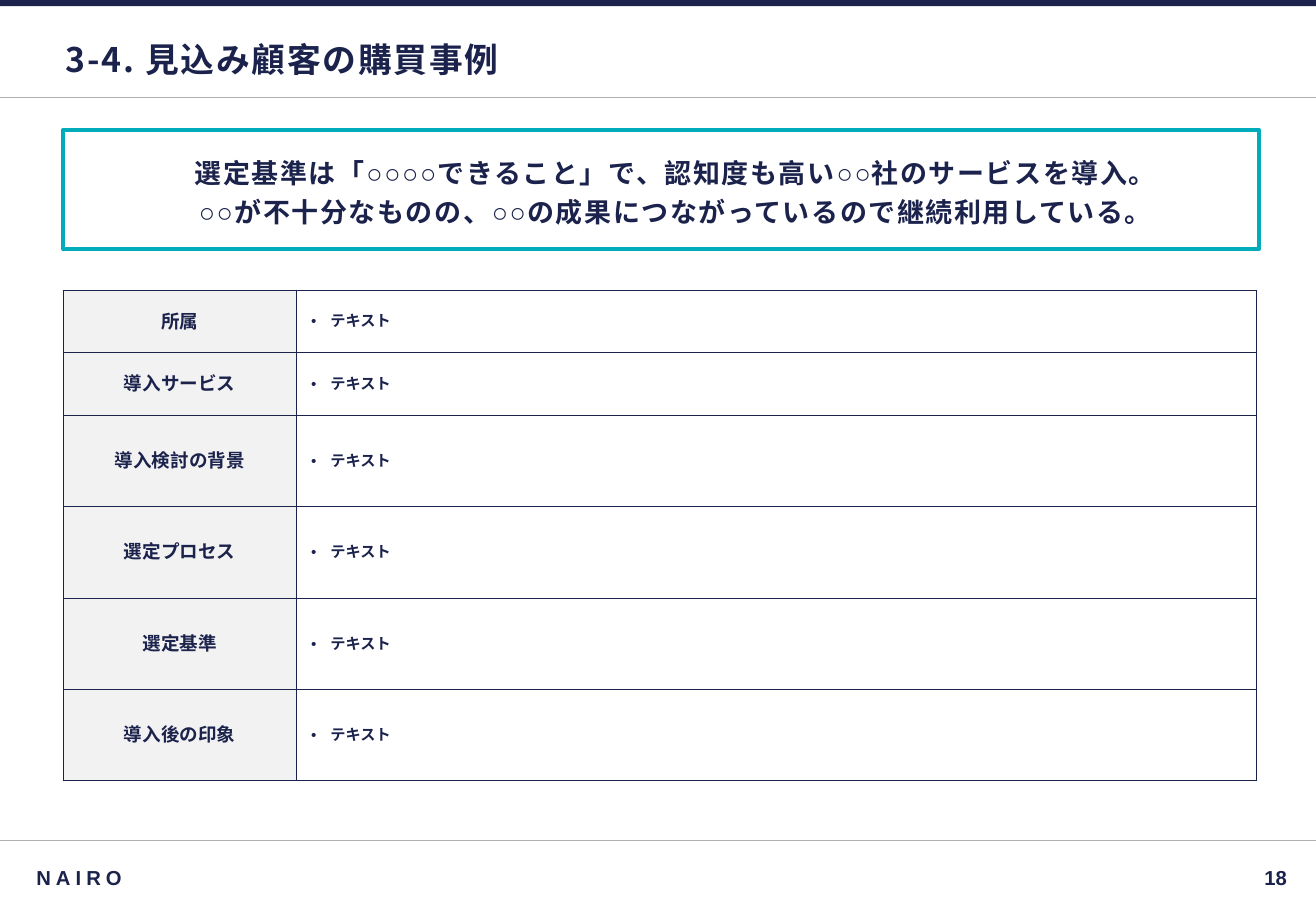
from lxml import etree
from pptx import Presentation
from pptx import util as u
from pptx.dml.color import RGBColor
from pptx.enum import shapes, text
from pptx.oxml.ns import qn

LEFT, CENTER, RIGHT = text.PP_ALIGN.LEFT, text.PP_ALIGN.CENTER, text.PP_ALIGN.RIGHT


def color(value):
    return RGBColor.from_string(value)


class CaseSlide:
    """Style and drawing methods for one slide; lengths are percentages of its size."""

    NAVY, TEAL, RULE, LABEL, WHITE = "1B224C", "00ACBA", "AFAFAF", "F2F2F2", "FFFFFF"
    BODY, HEADING = "Arial", "Noto Sans CJK JP"

    def __init__(self, deck):
        self.deck = deck
        self.page = deck.slides.add_slide(deck.slide_layouts[6])

    def x(self, share):
        return round(self.deck.slide_width * share / 100)

    def y(self, share):
        return round(self.deck.slide_height * share / 100)

    def area(self, left, top, width, height):
        return self.x(left), self.y(top), self.x(width), self.y(height)

    def rule(self, top):
        line = self.page.shapes.add_connector(
            shapes.MSO_CONNECTOR.STRAIGHT, 0, self.y(top), self.x(100), self.y(top))
        line.line.color.rgb = color(self.RULE)
        line.line.width = u.Pt(0.75)
        etree.SubElement(line._element.spPr, qn("a:effectLst"))

    def rectangle(self, place, fill=None, border=None):
        box = self.page.shapes.add_shape(shapes.MSO_SHAPE.RECTANGLE, *self.area(*place))
        box.shadow.inherit = False
        if fill:
            box.fill.solid()
            box.fill.fore_color.rgb = color(fill)
        else:
            box.fill.background()
        if border:
            box.line.color.rgb = color(border)
            box.line.width = u.Pt(2.5)
        else:
            box.line.fill.background()
        return box

    def add_span(self, para, words, size, align=LEFT, font=BODY, spacing=0):
        para.alignment = align
        span = para.add_run()
        span.text = words
        span.font.size = u.Pt(size)
        span.font.bold = True
        span.font.name = font
        span.font.color.rgb = color(self.NAVY)
        props = span._r.get_or_add_rPr()
        etree.SubElement(props, qn("a:ea"), typeface=font)
        if spacing:
            props.set("spc", str(spacing * 100))

    def indent(self, para, margin, first, bullet=None):
        props = para._p.get_or_add_pPr()
        props.set("marL", str(u.Inches(margin)))
        props.set("indent", str(u.Inches(first)))
        if bullet:
            etree.SubElement(props, qn("a:buFont"), typeface=self.BODY)
            etree.SubElement(props, qn("a:buChar"), char=bullet)

    def frame(self, box, insets):
        frame = box.text_frame
        frame.word_wrap = True
        frame.vertical_anchor = text.MSO_ANCHOR.MIDDLE
        (frame.margin_left, frame.margin_top,
         frame.margin_right, frame.margin_bottom) = map(u.Inches, insets)
        return frame

    def label(self, place, words, size, insets, **style):
        box = self.page.shapes.add_textbox(*self.area(*place))
        self.add_span(self.frame(box, insets).paragraphs[0], words, size, **style)

    def callout(self, place, lines):
        frame = self.frame(self.rectangle(place, border=self.TEAL), (0.08, 0.08, 0.08, 0.04))
        for number, words in enumerate(lines):
            para = frame.add_paragraph() if number else frame.paragraphs[0]
            para.space_after = u.Pt(4)
            self.indent(para, 0.5, -0.25)
            self.add_span(para, words, 16, CENTER, spacing=1)

    def cell(self, cell, fill, side):
        cell.fill.solid()
        cell.fill.fore_color.rgb = color(fill)
        cell.vertical_anchor = text.MSO_ANCHOR.MIDDLE
        cell.margin_left = cell.margin_right = u.Inches(side)
        cell.margin_top = cell.margin_bottom = u.Inches(0.08)
        props = cell._tc.get_or_add_tcPr()
        for place, edge in enumerate(("a:lnL", "a:lnR", "a:lnT", "a:lnB")):
            line = etree.Element(qn(edge), w=str(u.Pt(0.75)))
            solid = etree.SubElement(line, qn("a:solidFill"))
            etree.SubElement(solid, qn("a:srgbClr"), val=self.NAVY)
            props.insert(place, line)
        return cell.text_frame.paragraphs[0]

    def table(self, left, top, columns, rows):
        place = self.area(left, top, sum(columns), sum(height for _, height in rows))
        grid = self.page.shapes.add_table(len(rows), len(columns), *place).table
        for column, width in zip(grid.columns, columns):
            column.width = self.x(width)
        for row, (topic, height) in zip(grid.rows, rows):
            row.height = self.y(height)
            heading, detail = row.cells
            self.add_span(self.cell(heading, self.LABEL, 0.08), topic, 11, CENTER)
            para = self.cell(detail, self.WHITE, 0.12)
            self.indent(para, 0.16, -0.16, "•")
            self.add_span(para, "テキスト", 9)


def main():
    deck = Presentation()
    deck.slide_width, deck.slide_height = u.Inches(10.83), u.Inches(7.5)
    case = CaseSlide(deck)
    for top in (92.27, 10.67):
        case.rule(top)
    case.rectangle((0, 0, 100, 0.67), fill=case.NAVY)
    case.label((4.62, 2.8, 90.86, 6.8), "3-4. 見込み顧客の購買事例", 20,
               (0.04, 0.08, 0.04, 0.04), font=case.HEADING, spacing=1)
    case.label((83.66, 94.27, 14.5, 4.13), "18", 12, (0.04,) * 4, align=RIGHT)
    case.label((1.85, 94.27, 79.96, 4.13), "NAIRO", 12, (0.1, 0.05, 0.1, 0.05), spacing=3)
    case.callout((4.8, 14.27, 90.86, 13.07), (
        "選定基準は「○○○○できること」で、認知度も高い○○社のサービスを導入。",
        "○○が不十分なものの、○○の成果につながっているので継続利用している。"))
    short, tall = 6.87, 10.03
    case.table(4.8, 31.87, (17.73, 72.94), (
        ("所属", short), ("導入サービス", short), ("導入検討の背景", tall),
        ("選定プロセス", tall), ("選定基準", tall), ("導入後の印象", tall)))
    deck.save("out.pptx")


if __name__ == "__main__":
    main()
